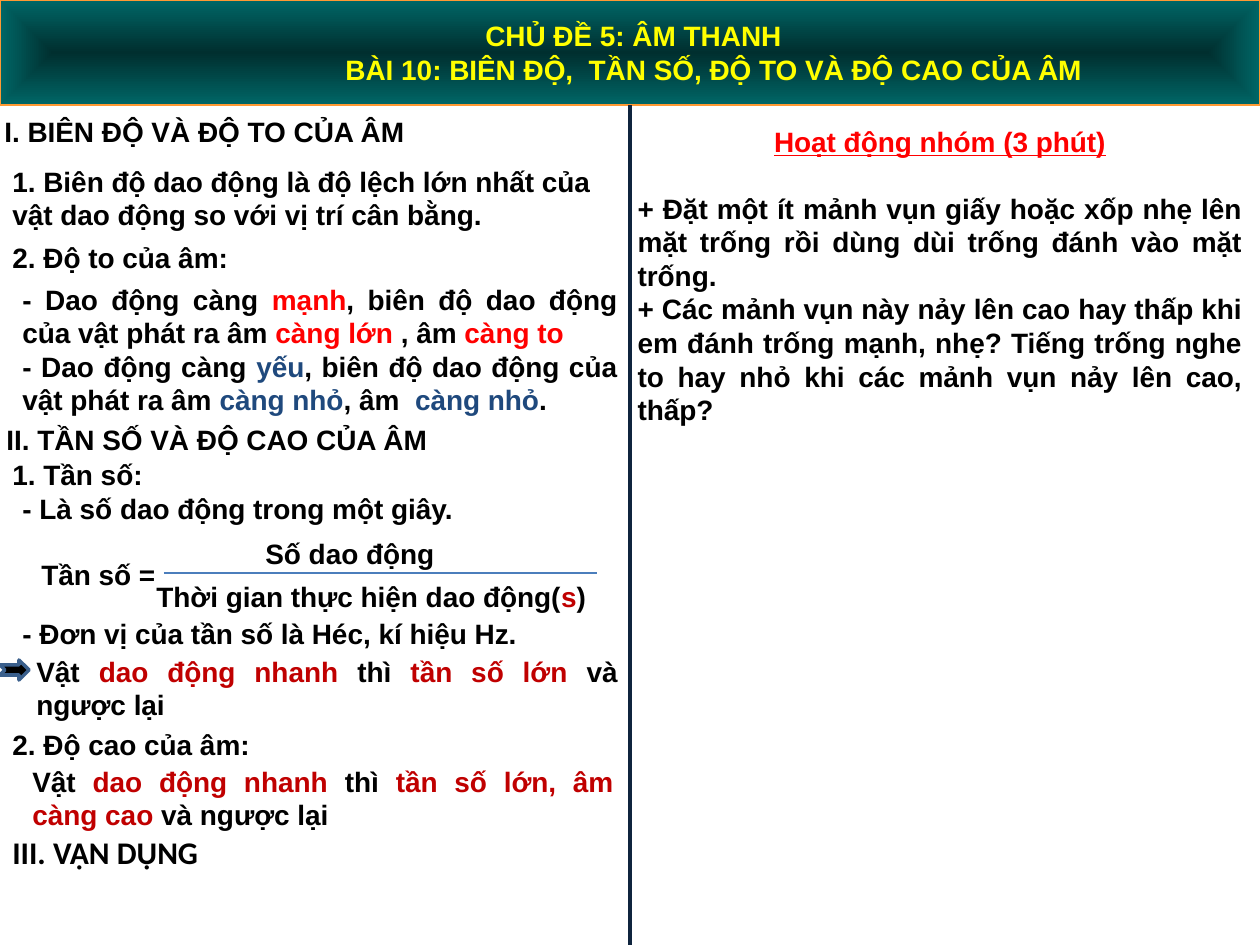
from lxml import etree
from pptx import Presentation, util as u
from pptx.dml.color import RGBColor
from pptx.enum import shapes, text
from pptx.oxml import ns, parse_xml

EMU_PER_PX = 914400 / 126
BLACK = RGBColor(0x00, 0x00, 0x00)
RED = RGBColor(0xFF, 0x00, 0x00)
CRIMSON = RGBColor(0xC0, 0x00, 0x00)
BLUE = RGBColor(0x1F, 0x49, 0x7D)
YELLOW = RGBColor(0xFF, 0xFF, 0x00)
DEEP_TEAL = RGBColor(0x00, 0x2F, 0x2F)
TEAL = RGBColor(0x00, 0x66, 0x66)
ORANGE = RGBColor(0xFF, 0x99, 0x33)
NAVY = RGBColor(0x0F, 0x24, 0x3E)
STEEL = RGBColor(0x3A, 0x5F, 0x8C)
RULE_BLUE = RGBColor(0x4B, 0x7E, 0xBC)

FONT = {"name": "Arial", "size": u.Pt(16), "bold": True}
SECTION_FONT = {"name": "Calibri", "size": u.Pt(18)}
LEFT, CENTER, JUSTIFY = text.PP_ALIGN.LEFT, text.PP_ALIGN.CENTER, text.PP_ALIGN.JUSTIFY
FIT, FIXED = text.MSO_AUTO_SIZE.SHAPE_TO_FIT_TEXT, text.MSO_AUTO_SIZE.NONE


def px(length):
    return u.Emu(round(length * EMU_PER_PX))


def set_all(target, values):
    for name, value in values.items():
        setattr(target, name, value)


def place(box, left, top, width, height):
    set_all(box, {"left": px(left), "top": px(top), "width": px(width), "height": px(height)})


def write_para(para, content, align=LEFT, color=BLACK, **extra):
    """Fill a paragraph from a string, or from strings and (string, colour) pairs."""
    para.alignment = align
    for part in [content] if isinstance(content, str) else content:
        words, tint = (part, color) if isinstance(part, str) else part
        span = para.add_run()
        span.text = words
        set_all(span.font, {**FONT, **extra})
        span.font.color.rgb = tint


def next_para(frame, index):
    return frame.paragraphs[0] if index == 0 else frame.add_paragraph()


def add_text(parent, bounds, paras, align=LEFT, wrap=False, **extra):
    box = parent.shapes.add_textbox(*map(px, bounds))
    set_all(box.text_frame, {"word_wrap": wrap, "auto_size": FIT})
    for index, content in enumerate(paras):
        write_para(next_para(box.text_frame, index), content, align, **extra)


def add_line(parent, start, end, color, weight):
    line = parent.shapes.add_connector(shapes.MSO_CONNECTOR.STRAIGHT, *map(px, start + end))
    line.line.color.rgb = color
    line.line.width = u.Pt(weight)
    etree.SubElement(line._element.spPr, ns.qn("a:effectLst"))
    return line


def format_banner(banner):
    place(banner, 0, 0, 1260, 105)
    banner._element.spPr.append(parse_xml(
        f'<a:prstGeom {ns.nsdecls("a")} prst="plaque"><a:avLst>'
        '<a:gd name="adj" fmla="val 16667"/></a:avLst></a:prstGeom>'))
    banner.fill.gradient()
    for stop, color in zip(banner.fill.gradient_stops, (DEEP_TEAL, TEAL)):
        stop.color.rgb = color
    linear = banner._element.spPr.find(".//" + ns.qn("a:lin"))
    linear.getparent().replace(linear, parse_xml(
        f'<a:path {ns.nsdecls("a")} path="shape">'
        '<a:fillToRect l="50000" t="50000" r="50000" b="50000"/></a:path>'))
    banner.line.color.rgb = ORANGE
    banner.line.width = u.Pt(0.75)

    frame = banner.text_frame
    set_all(frame, {"auto_size": FIXED, "vertical_anchor": text.MSO_ANCHOR.MIDDLE})
    lines = [("CHỦ ĐỀ 5: ÂM THANH", 7),
             ("BÀI 10: BIÊN ĐỘ,  TẦN SỐ, ĐỘ TO VÀ ĐỘ CAO CỦA ÂM", 168)]
    for index, (words, indent) in enumerate(lines):
        para = next_para(frame, index)
        write_para(para, words, CENTER, YELLOW)
        para._p.get_or_add_pPr().set("marL", str(px(indent)))


def format_activity(body):
    place(body, 625, 118, 630, 318)
    frame = body.text_frame
    set_all(frame, {"auto_size": FIXED, "vertical_anchor": text.MSO_ANCHOR.TOP})
    paras = [
        ("Hoạt động nhóm (3 phút)", CENTER, RED, True, 19),
        ("+ Đặt một ít mảnh vụn giấy hoặc xốp nhẹ lên mặt trống rồi dùng dùi trống "
         "đánh vào mặt trống.", JUSTIFY, BLACK, False, 0),
        ("+ Các mảnh vụn này nảy lên cao hay thấp khi em đánh trống mạnh, nhẹ? Tiếng "
         "trống nghe to hay nhỏ khi các mảnh vụn nảy lên cao, thấp?",
         JUSTIFY, BLACK, False, 0),
    ]
    for index, (words, align, color, underline, gap) in enumerate(paras):
        para = next_para(frame, index)
        write_para(para, words, align, color, underline=underline)
        set_all(para, {"space_before": u.Pt(0), "space_after": u.Pt(gap)})
        props = para._p.get_or_add_pPr()
        props.set("marL", "0")
        props.set("indent", "0")
        etree.SubElement(props, ns.qn("a:buNone"))


def add_loudness(page):
    add_text(page, (-8, 108, 431, 47), ["I. BIÊN ĐỘ VÀ ĐỘ TO CỦA ÂM"])
    add_text(page, (0, 158, 630, 81),
             ["1. Biên độ dao động là độ lệch lớn nhất của vật dao động so với vị trí cân bằng."],
             wrap=True)
    add_text(page, (0, 234, 246, 47), ["2. Độ to của âm:"], wrap=True)
    add_text(page, (10, 276, 620, 149), [
        ["- Dao động càng ", ("mạnh", RED), ", biên độ dao động của vật phát ra âm ",
         ("càng lớn ", RED), ", âm ", ("càng to", RED)],
        ["- Dao động càng ", ("yếu", BLUE), ", biên độ dao động của vật phát ra âm ",
         ("càng nhỏ", BLUE), ", âm  ", ("càng nhỏ", BLUE), "."],
    ], JUSTIFY, wrap=True)


def add_fraction(page):
    group = page.shapes.add_group_shape()
    add_text(group, (29, 551, 149, 47), ["Tần số ="])
    add_text(group, (253, 530, 197, 47), ["Số dao động"])
    add_text(group, (144, 573, 461, 47), [["Thời gian thực hiện dao động(", ("s", CRIMSON), ")"]])
    add_line(group, (164, 573), (597, 573), RULE_BLUE, 0.75)


def add_arrow(page):
    arrow = page.shapes.add_shape(shapes.MSO_SHAPE.NOTCHED_RIGHT_ARROW,
                                  *map(px, (0, 660, 29, 20)))
    arrow.shadow.inherit = False
    arrow.fill.solid()
    arrow.fill.fore_color.rgb = BLACK
    arrow.line.color.rgb = STEEL
    arrow.line.width = u.Pt(2)


def add_pitch(page):
    add_text(page, (-6, 416, 452, 47), ["II. TẦN SỐ VÀ ĐỘ CAO CỦA ÂM"])
    add_text(page, (0, 451, 246, 47), ["1. Tần số:"], wrap=True)
    add_text(page, (10, 485, 462, 47), ["- Là số dao động trong một giây."])
    add_fraction(page)
    add_text(page, (10, 610, 527, 47), ["- Đơn vị của tần số là Héc, kí hiệu Hz."])
    add_arrow(page)
    add_text(page, (0, 721, 295, 47), ["2. Độ cao của âm:"], wrap=True)
    for left, top, result in [(24, 648, "tần số lớn "), (20, 758, "tần số lớn, âm càng cao ")]:
        add_text(page, (left, top, 606, 81), [
            ["Vật ", ("dao động nhanh ", CRIMSON), "thì ", (result, CRIMSON), "và ngược lại"],
        ], JUSTIFY, wrap=True)


def main():
    deck = Presentation()
    set_all(deck, {"slide_width": px(1260), "slide_height": px(945)})
    page = deck.slides.add_slide(deck.slide_layouts[1])

    # Banner and the divider below it
    banner = page.shapes.title
    format_banner(banner)
    divider = add_line(page, (630, 105), (630, 945), NAVY, 2)
    divider.begin_connect(banner, 2)

    # Left column: lesson notes
    add_loudness(page)
    add_pitch(page)
    add_text(page, (0, 827, 213, 50), ["III. VẬN DỤNG"], **SECTION_FONT)

    # Right column: group activity
    format_activity(page.placeholders[1])

    deck.save("out.pptx")


if __name__ == "__main__":
    main()
